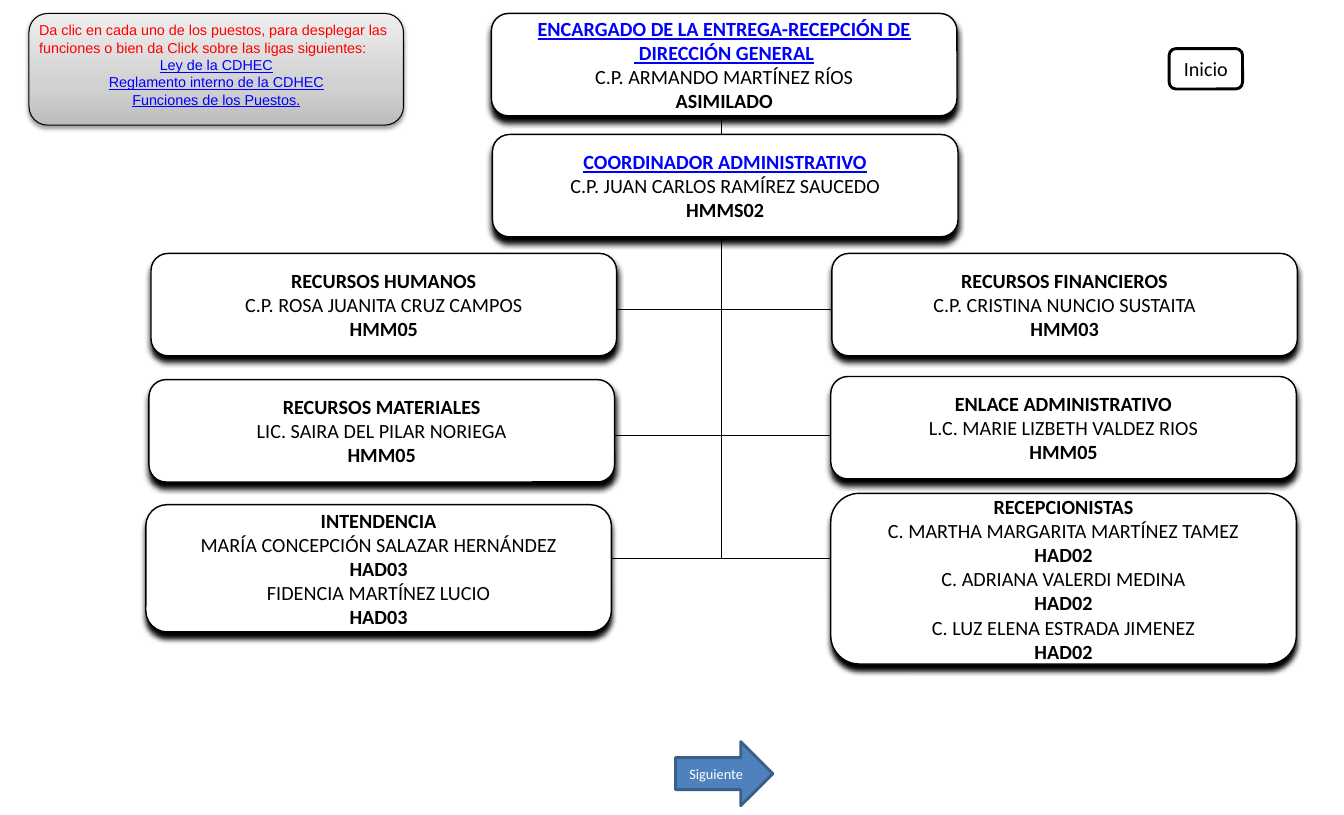
from dataclasses import dataclass

from lxml.etree import SubElement
from pptx import Presentation
from pptx.dml.color import RGBColor
from pptx.enum.shapes import MSO_CONNECTOR, MSO_SHAPE
from pptx.enum.text import MSO_ANCHOR, PP_ALIGN
from pptx.oxml import parse_xml
from pptx.oxml.ns import nsdecls, qn
from pptx.shapes.autoshape import Shape
from pptx.slide import Slide
from pptx.text.text import TextFrame
from pptx.util import Inches, Pt

BLACK, WHITE, LINK, RED = "000000", "FFFFFF", "0000FF", "FF0000"
CARD_WIDTH = 4.5


@dataclass
class Line:
    text: str
    size: int = 14
    font: str = "Calibri"
    color: str = BLACK
    bold: bool = False
    underline: bool = False
    align: PP_ALIGN = PP_ALIGN.CENTER


@dataclass
class Post:
    left: float
    top: float
    titles: list[str]
    holders: list[tuple[str, str]]
    height: float = 0.99
    linked: bool = False


@dataclass
class Branch:
    x1: float
    y1: float
    x2: float
    y2: float


BRANCHES = [
    Branch(6.97, 1.12, 6.97, 5.4),
    *(Branch(5.79, y, 8.09, y) for y in (2.99, 4.21, 5.4)),
]

POSTS = [
    Post(4.75, 0.13, ["ENCARGADO DE LA ENTREGA-RECEPCIÓN DE", " DIRECCIÓN GENERAL"],
         [("C.P. ARMANDO MARTÍNEZ RÍOS", "ASIMILADO")], linked=True),
    Post(4.76, 1.3, ["COORDINADOR ADMINISTRATIVO"],
         [("C.P. JUAN CARLOS RAMÍREZ SAUCEDO", "HMMS02")], linked=True),
    Post(1.46, 2.45, ["RECURSOS HUMANOS"], [("C.P. ROSA JUANITA CRUZ CAMPOS", "HMM05")]),
    Post(8.04, 2.45, ["RECURSOS FINANCIEROS"], [("C.P. CRISTINA NUNCIO SUSTAITA", "HMM03")]),
    Post(1.44, 3.67, ["RECURSOS MATERIALES"], [("LIC. SAIRA DEL PILAR NORIEGA", "HMM05")]),
    Post(1.41, 4.88, ["INTENDENCIA"],
         [("MARÍA CONCEPCIÓN SALAZAR HERNÁNDEZ", "HAD03"),
          ("FIDENCIA MARTÍNEZ LUCIO", "HAD03")], height=1.23),
    Post(8.03, 4.77, ["RECEPCIONISTAS"],
         [("C. MARTHA MARGARITA MARTÍNEZ TAMEZ", "HAD02"),
          ("C. ADRIANA VALERDI MEDINA", "HAD02"),
          ("C. LUZ ELENA ESTRADA JIMENEZ", "HAD02")], height=1.65),
    Post(8.03, 3.64, ["ENLACE ADMINISTRATIVO"], [("L.C. MARIE LIZBETH VALDEZ RIOS", "HMM05")]),
]

GUIDE = [
    Line("Da clic en cada uno de los puestos, para desplegar las funciones "
         "o bien da Click sobre las ligas siguientes:", 10, "Arial", RED, align=PP_ALIGN.LEFT),
    *(Line(text, 10, "Arial", LINK, underline=True) for text in
      ("Ley de la CDHEC", "Reglamento interno de la CDHEC", "Funciones de los Puestos.")),
]


def rgb(color: str) -> RGBColor:
    return RGBColor.from_string(color)


def write(frame: TextFrame, lines: list[Line]) -> None:
    for index, line in enumerate(lines):
        paragraph = frame.add_paragraph() if index else frame.paragraphs[0]
        paragraph.text = line.text
        paragraph.alignment = line.align
        font = paragraph.font
        font.name, font.size = line.font, Pt(line.size)
        font.bold, font.underline = line.bold, line.underline
        font.color.rgb = rgb(line.color)


def add_box(slide: Slide, preset: MSO_SHAPE, left: float, top: float, width: float,
            height: float, fill: str, border: str, weight: float) -> Shape:
    box = slide.shapes.add_shape(preset, Inches(left), Inches(top), Inches(width), Inches(height))
    box.fill.solid()
    box.fill.fore_color.rgb = rgb(fill)
    box.line.color.rgb = rgb(border)
    box.line.width = Pt(weight)
    box.shadow.inherit = False
    box.text_frame.vertical_anchor = MSO_ANCHOR.MIDDLE
    return box


def add_shadow(box: Shape, blur: float, distance: float, opacity: int) -> None:
    effects = box.element.spPr.find(qn("a:effectLst"))
    shadow = SubElement(effects, qn("a:outerShdw"), blurRad=str(Pt(blur)), dist=str(Pt(distance)),
                        dir="5400000", rotWithShape="0")
    color = SubElement(shadow, qn("a:srgbClr"), val=BLACK)
    SubElement(color, qn("a:alpha"), val=str(opacity * 1000))


def add_branch(slide: Slide, branch: Branch) -> None:
    connector = slide.shapes.add_connector(
        MSO_CONNECTOR.STRAIGHT, Inches(branch.x1), Inches(branch.y1),
        Inches(branch.x2), Inches(branch.y2))
    connector.line.color.rgb = rgb(BLACK)
    connector.line.width = Pt(0.75)
    SubElement(connector.element.spPr, qn("a:effectLst"))


def add_post(slide: Slide, post: Post) -> None:
    card = add_box(slide, MSO_SHAPE.ROUNDED_RECTANGLE, post.left, post.top,
                   CARD_WIDTH, post.height, WHITE, BLACK, 1)
    add_shadow(card, 4, 4, 100)
    frame = card.text_frame
    frame.word_wrap = False
    frame.margin_left = frame.margin_right = Inches(0.17)
    frame.margin_top = frame.margin_bottom = Inches(0.09)
    color = LINK if post.linked else BLACK
    lines = [Line(title, color=color, bold=True, underline=post.linked) for title in post.titles]
    for name, code in post.holders:
        lines += [Line(name), Line(code, bold=True)]
    write(frame, lines)


def add_guide(slide: Slide) -> None:
    panel = add_box(slide, MSO_SHAPE.ROUNDED_RECTANGLE, 0.28, 0.13, 3.62, 1.08, WHITE, BLACK, 0.75)
    add_shadow(panel, 3.1, 1.6, 38)
    stops = "".join(f'<a:gs pos="{position * 1000}"><a:srgbClr val="{color}"/></a:gs>'
                    for position, color in ((0, "BDBDBD"), (35, "D1D1D1"), (100, "EEEEEE")))
    gradient = parse_xml(f'<a:gradFill {nsdecls("a")} rotWithShape="1"><a:gsLst>{stops}</a:gsLst>'
                         '<a:lin ang="16200000" scaled="1"/></a:gradFill>')
    properties = panel.element.spPr
    properties.replace(properties.find(qn("a:solidFill")), gradient)
    guide = slide.shapes.add_textbox(Inches(0.28), Inches(0.16), Inches(3.62), Inches(0.94))
    guide.text_frame.word_wrap = True
    write(guide.text_frame, GUIDE)


def main() -> None:
    presentation = Presentation()
    presentation.slide_width, presentation.slide_height = Inches(12.99), Inches(7.88)
    slide = presentation.slides.add_slide(presentation.slide_layouts[6])
    for branch in BRANCHES:
        add_branch(slide, branch)
    for post in POSTS:
        add_post(slide, post)
    home = add_box(slide, MSO_SHAPE.ROUNDED_RECTANGLE, 11.3, 0.47, 0.71, 0.39, WHITE, BLACK, 2)
    write(home.text_frame, [Line("Inicio")])
    add_guide(slide)
    following = add_box(slide, MSO_SHAPE.RIGHT_ARROW, 6.53, 7.17, 0.94, 0.62, "4F81BD", "3A5F8C", 2)
    write(following.text_frame, [Line("Siguiente", 10, color=WHITE)])
    presentation.save("out.pptx")


if __name__ == "__main__":
    main()
